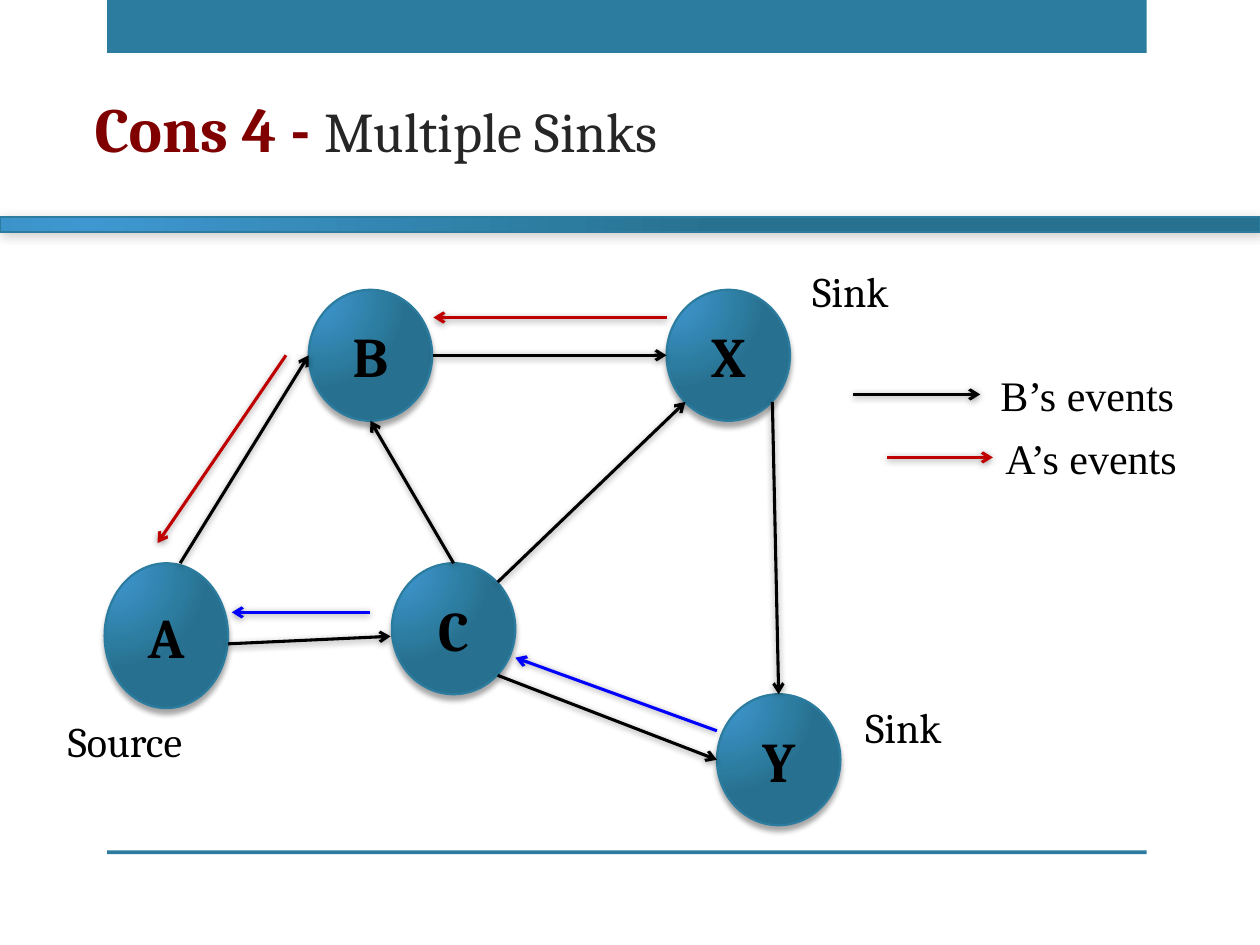
from lxml import etree
from pptx import Presentation
from pptx import util as u
from pptx.dml.color import RGBColor
from pptx.enum import shapes, text
from pptx.oxml import parse_xml
from pptx.oxml.ns import nsdecls, qn

rgb = RGBColor.from_string
TEAL, BLACK, RED, BLUE = "2C7C9F", "000000", "C00000", "0000FF"


def add_shadow(sp, alpha, blur, dist, angle):
    spPr = sp._element.spPr
    for old in spPr.findall(qn("a:effectLst")):
        spPr.remove(old)
    spPr.append(parse_xml(
        f'<a:effectLst {nsdecls("a")}><a:outerShdw blurRad="{u.Pt(blur)}" '
        f'dist="{u.Pt(dist)}" dir="{angle * 60000}" rotWithShape="0">'
        f'<a:srgbClr val="000000"><a:alpha val="{alpha * 1000}"/></a:srgbClr>'
        '</a:outerShdw></a:effectLst>'))


def add_glossy(kind, x, y, w, h):
    sp = s.shapes.add_shape(kind, *map(u.Inches, (x, y, w, h)))
    sp.fill.solid()
    sp.line.color.rgb = rgb(TEAL)
    sp.line.width = u.Pt(1.25)
    stops = "".join(
        f'<a:gs pos="{pos * 1000}"><a:srgbClr val="{c}"/></a:gs>'
        for pos, c in ((0, "3F97D1"), (76, TEAL), (100, "28708F")))
    spPr = sp._element.spPr
    spPr.replace(spPr.find(qn("a:solidFill")), parse_xml(
        f'<a:gradFill {nsdecls("a")} rotWithShape="1"><a:gsLst>{stops}</a:gsLst>'
        '<a:path path="circle"><a:fillToRect l="15000" t="15000" r="100000" '
        'b="100000"/></a:path></a:gradFill>'))
    return sp


prs = Presentation()
prs.slide_width, prs.slide_height = u.Inches(10), u.Inches(7.5)
s = prs.slides.add_slide(prs.slide_layouts[5])

for y, h in ((0, 0.42), (6.75, 0.03)):
    sp = s.shapes.add_shape(shapes.MSO_SHAPE.RECTANGLE, u.Inches(0.85),
                            u.Inches(y), u.Inches(8.25), u.Inches(h))
    sp.shadow.inherit = False
    sp.fill.solid()
    sp.fill.fore_color.rgb = rgb(TEAL)
    sp.line.fill.background()

add_shadow(add_glossy(shapes.MSO_SHAPE.RECTANGLE, 0, 1.72, 10, 0.12), 20, 6, 1, 45)

title = s.shapes.title
title.left, title.top = u.Inches(0.65), u.Inches(0.63)
title.width, title.height = u.Inches(7.74), u.Inches(0.73)
tf = title.text_frame
tf.auto_size = text.MSO_AUTO_SIZE.NONE
tf.vertical_anchor = text.MSO_ANCHOR.BOTTOM
p = tf.paragraphs[0]
p.alignment = text.PP_ALIGN.LEFT
for words, size, color, bold in (("Cons 4 - ", 36, "800000", True),
                                 ("Multiple Sinks", 32, "262626", False)):
    r = p.add_run()
    r.text = words
    r.font.name, r.font.size, r.font.bold = "Cambria", u.Pt(size), bold
    r.font.color.rgb = rgb(color)

nodes = (("B", 2.45, 2.3, 1.04), ("X", 5.29, 2.3, 1.04), ("A", 0.83, 4.47, 1.15),
         ("C", 3.11, 4.47, 1.04), ("Y", 5.69, 5.51, 1.04))
for name, x, y, h in nodes:
    sp = add_glossy(shapes.MSO_SHAPE.OVAL, x, y, 0.98, h)
    add_shadow(sp, 35, 3, 3, 90)
    tf = sp.text_frame
    tf.vertical_anchor = text.MSO_ANCHOR.MIDDLE
    p = tf.paragraphs[0]
    p.text = name
    p.alignment = text.PP_ALIGN.CENTER
    p.font.name, p.font.size, p.font.bold = "Cambria", u.Pt(32), True
    p.font.color.rgb = rgb(BLACK)

arrows = {
    BLACK: ((3.44, 2.82, 5.29, 2.82), (6.13, 3.19, 6.18, 5.51),
            (1.81, 5.11, 3.1, 5.05), (3.95, 4.62, 5.44, 3.19),
            (1.43, 4.47, 2.45, 2.82), (3.6, 4.47, 2.94, 3.34),
            (3.95, 5.36, 5.69, 6.03), (6.77, 3.13, 7.78, 3.13)),
    RED: ((5.29, 2.52, 3.44, 2.52), (2.27, 2.82, 1.25, 4.31),
          (7.04, 3.63, 7.88, 3.63)),
    BLUE: ((5.69, 5.8, 4.09, 5.22), (2.94, 4.86, 1.84, 4.86)),
}
for color, ends in arrows.items():
    for points in ends:
        cx = s.shapes.add_connector(shapes.MSO_CONNECTOR.STRAIGHT,
                                    *map(u.Inches, points))
        cx.line.color.rgb = rgb(color)
        cx.line.width = u.Pt(1.75)
        etree.SubElement(cx.line._get_or_add_ln(), qn("a:tailEnd"), type="arrow")
        add_shadow(cx, 40, 4, 1, 88)

labels = (("Sink", 6.35, 2.06, 0.83, 0.81, "Cambria"),
          ("Sink", 6.77, 5.52, 0.83, 0.81, "Cambria"),
          ("Source", 0.44, 5.63, 1.19, 0.81, "Cambria"),
          ("B’s events", 7.84, 2.88, 1.59, 0.5, "Times New Roman"),
          ("A’s events", 7.88, 3.38, 1.59, 0.5, "Times New Roman"))
for words, x, y, w, h, font in labels:
    tf = s.shapes.add_textbox(*map(u.Inches, (x, y, w, h))).text_frame
    tf.word_wrap = False
    p = tf.paragraphs[0]
    p.text = words
    p.font.name, p.font.size = font, u.Pt(24)
    p.font.color.rgb = rgb(BLACK)

prs.save("out.pptx")
